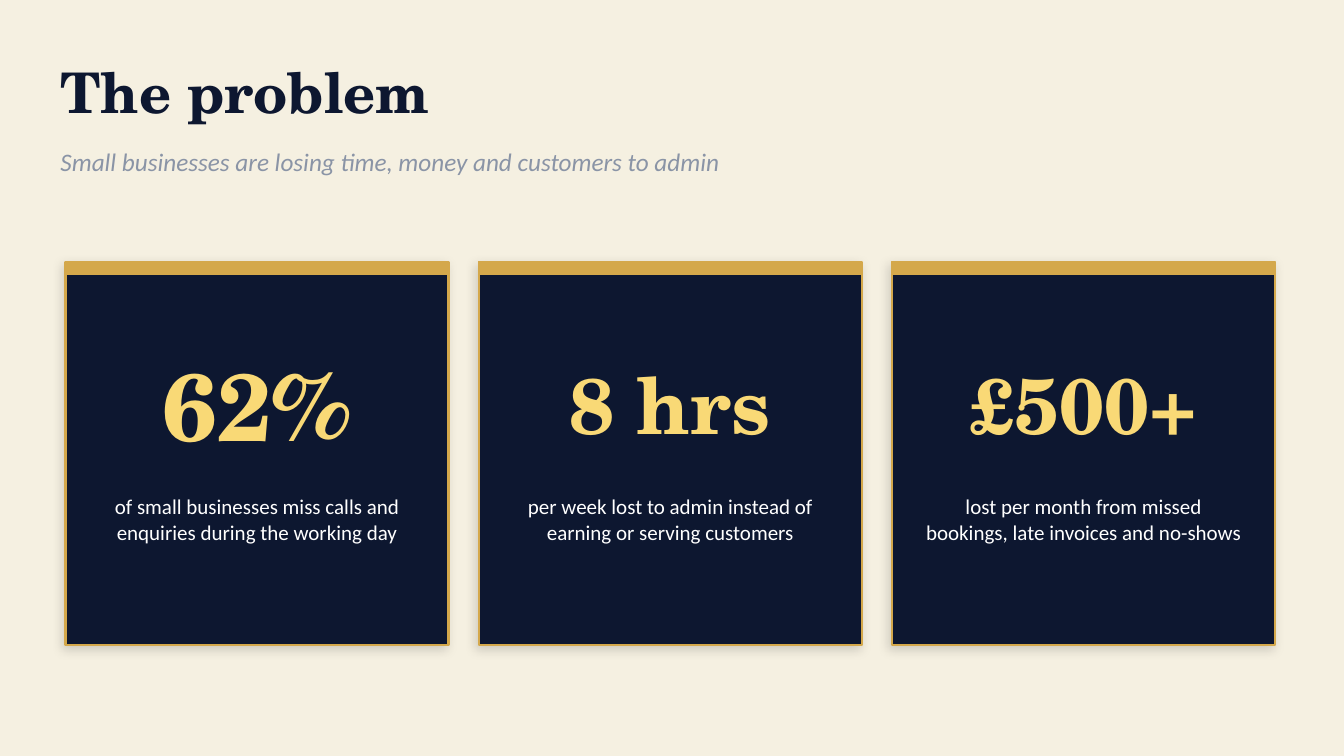
"""Build the slide on what admin costs small businesses."""
from lxml import etree
from pptx import Presentation
from pptx.dml.color import RGBColor
from pptx.enum.shapes import MSO_SHAPE
from pptx.enum.text import MSO_ANCHOR, PP_ALIGN
from pptx.oxml.ns import qn
from pptx.util import Pt

RECTANGLE = MSO_SHAPE.RECTANGLE
TOP, MIDDLE = MSO_ANCHOR.TOP, MSO_ANCHOR.MIDDLE
LEFT, CENTER = PP_ALIGN.LEFT, PP_ALIGN.CENTER

CREAM = RGBColor(0xF5, 0xF0, 0xE1)
NAVY = RGBColor(0x0D, 0x17, 0x30)
GREY = RGBColor(0x8A, 0x94, 0xA6)
GOLD = RGBColor(0xD4, 0xA8, 0x4B)
YELLOW = RGBColor(0xF9, 0xD9, 0x76)
WHITE = RGBColor(0xFF, 0xFF, 0xFF)
BLACK = RGBColor(0x00, 0x00, 0x00)

SERIF = "TeX Gyre Schola"
SANS = "Calibri"

TITLE = {"name": SERIF, "size": Pt(40), "bold": True, "color": NAVY}
SUBTITLE = {"name": SANS, "size": Pt(18), "italic": True, "color": GREY}
FIGURE = {"name": SERIF, "bold": True, "color": YELLOW}
CAPTION = {"name": SANS, "size": Pt(15), "color": WHITE}

CARD_LEFT, CARD_TOP, CARD_SIDE, CARD_STEP = 46.8, 187.2, 273.6, 295.2
BAND_HEIGHT = 8.64
FIGURE_INSET, CAPTION_INSET = 10.8, 21.6

CARDS = [
    ("62%", 68, "of small businesses miss calls and enquiries during the working day"),
    ("8 hrs", 56, "per week lost to admin instead of earning or serving customers"),
    ("£500+", 56, "lost per month from missed bookings, late invoices and no-shows"),
]


def add_text(page, area, text, style, align=LEFT, anchor=MIDDLE):
    """Add a wrapped text box without margins in one style."""
    box = page.shapes.add_textbox(*map(Pt, area))
    frame = box.text_frame
    frame.word_wrap = True
    frame.vertical_anchor = anchor
    for side in ("left", "right", "top", "bottom"):
        setattr(frame, f"margin_{side}", 0)
    para = frame.paragraphs[0]
    para.alignment = align
    span = para.add_run()
    span.text = text
    for key, value in style.items():
        if key == "color":
            span.font.color.rgb = value
        else:
            setattr(span.font, key, value)


def add_panel(page, area, fill, line_width):
    """Add a filled rectangle with a gold outline."""
    panel = page.shapes.add_shape(RECTANGLE, *map(Pt, area))
    panel.shadow.inherit = False
    panel.fill.solid()
    panel.fill.fore_color.rgb = fill
    panel.line.color.rgb = GOLD
    panel.line.width = Pt(line_width)
    return panel


def add_soft_shadow(panel):
    """Give a panel a faint blurred shadow to the lower left."""
    effects = panel.element.spPr.find(qn("a:effectLst"))
    shadow = etree.SubElement(
        effects, qn("a:outerShdw"), blurRad=str(Pt(8)), dist=str(Pt(3)),
        dir=str(135 * 60000), algn="bl", rotWithShape="0")
    color = etree.SubElement(shadow, qn("a:srgbClr"), val=str(BLACK))
    etree.SubElement(color, qn("a:alpha"), val="15000")


def add_card(page, left, figure, figure_size, caption):
    """Add a card with a gold band, a large figure and its caption."""
    card = add_panel(page, (left, CARD_TOP, CARD_SIDE, CARD_SIDE), NAVY, 1.5)
    add_soft_shadow(card)
    add_panel(page, (left, CARD_TOP, CARD_SIDE, BAND_HEIGHT), GOLD, 1)
    figure_area = (left + FIGURE_INSET, 237.6, CARD_SIDE - 2 * FIGURE_INSET, 100.8)
    add_text(page, figure_area, figure, {**FIGURE, "size": Pt(figure_size)}, CENTER)
    caption_area = (left + CAPTION_INSET, 352.8, CARD_SIDE - 2 * CAPTION_INSET, 100.8)
    add_text(page, caption_area, caption, CAPTION, CENTER, TOP)


def main():
    """Build and save the deck."""
    deck = Presentation()
    deck.slide_width, deck.slide_height = Pt(960), Pt(540)
    page = deck.slides.add_slide(deck.slide_layouts[6])
    page.background.fill.solid()
    page.background.fill.fore_color.rgb = CREAM
    add_text(page, (43.2, 36, 864, 57.6), "The problem", TITLE)
    add_text(page, (43.2, 97.2, 864, 36),
             "Small businesses are losing time, money and customers to admin", SUBTITLE)
    for index, card in enumerate(CARDS):
        add_card(page, CARD_LEFT + index * CARD_STEP, *card)
    deck.save("out.pptx")


if __name__ == "__main__":
    main()
